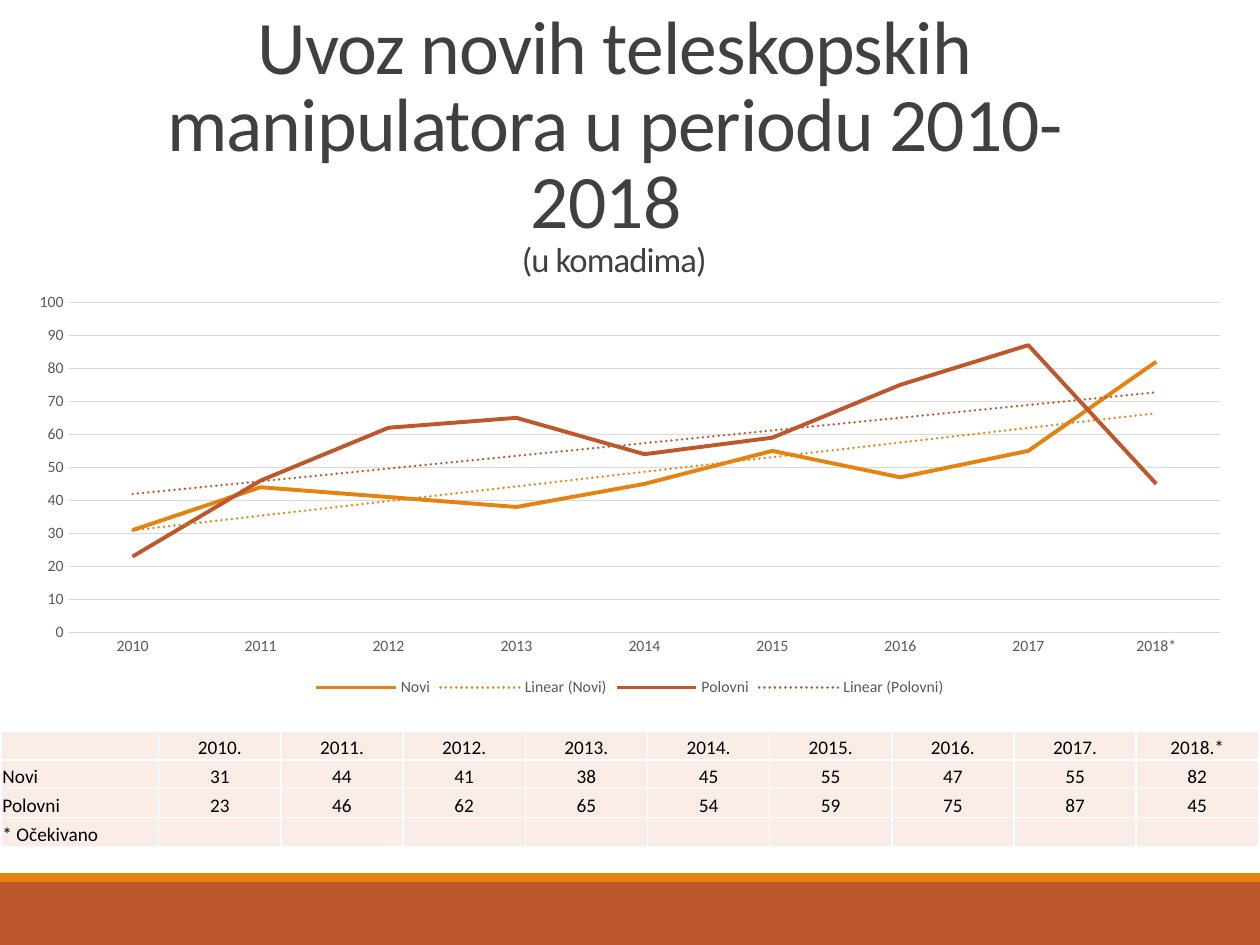
from lxml import etree
from pptx import Presentation
from pptx.chart.data import CategoryChartData
from pptx.dml.color import RGBColor
from pptx.enum.chart import XL_CHART_TYPE, XL_LEGEND_POSITION, XL_MARKER_STYLE, XL_TICK_MARK
from pptx.enum.shapes import MSO_SHAPE
from pptx.enum.text import MSO_ANCHOR, MSO_AUTO_SIZE, PP_ALIGN
from pptx.oxml import parse_xml
from pptx.oxml.ns import nsdecls, qn
from pptx.util import Inches, Pt

LINE, BOTTOM = XL_CHART_TYPE.LINE, XL_LEGEND_POSITION.BOTTOM
NO_MARKER, NO_TICK = XL_MARKER_STYLE.NONE, XL_TICK_MARK.NONE
RECTANGLE, CENTER, LEFT = MSO_SHAPE.RECTANGLE, PP_ALIGN.CENTER, PP_ALIGN.LEFT
ANCHOR_BOTTOM, NO_FIT = MSO_ANCHOR.BOTTOM, MSO_AUTO_SIZE.NONE

ORANGE, RUST, GRAY, GRID = "E48312", "BD582C", "595959", "D9D9D9"
YEARS = range(2010, 2019)
IMPORTS = {
    "Novi": ([31, 44, 41, 38, 45, 55, 47, 55, 82], ORANGE),
    "Polovni": ([23, 46, 62, 65, 54, 59, 75, 87, 45], RUST),
}


def color(value):
    return RGBColor.from_string(value)


def set_font(font, size, value):
    for name, setting in {"size": Pt(size), "name": "Calibri"}.items():
        setattr(font, name, setting)
    font.color.rgb = color(value)


deck = Presentation()
deck.slide_width, deck.slide_height = Inches(10), Inches(7.5)
page = deck.slides.add_slide(deck.slide_layouts[5])

for top, height, fill in [(7, 0.5, RUST), (6.93, 0.07, ORANGE)]:
    band = page.shapes.add_shape(RECTANGLE, 0, Inches(top), deck.slide_width, Inches(height))
    band.shadow.inherit = False
    band.fill.solid()
    band.fill.fore_color.rgb = color(fill)
    band.line.fill.background()

title = page.shapes.title
title.left, title.top, title.width, title.height = map(Inches, (0.75, 0.68, 8.25, 1.59))
frame = title.text_frame
for name, setting in {"word_wrap": True, "auto_size": NO_FIT, "vertical_anchor": ANCHOR_BOTTOM}.items():
    setattr(frame, name, setting)
para = frame.paragraphs[0]
para.alignment, para.line_spacing = CENTER, 0.85
for text, size in [("Uvoz novih teleskopskih manipulatora u periodu 2010-2018 ", 43.2), ("(u komadima)", 19.8)]:
    if para.runs:
        para.add_line_break()
    span = para.add_run()
    span.text = text
    set_font(span.font, size, "404040")
    span.font._element.set("spc", "-50")

data = CategoryChartData()
data.categories = [f"{year}*" if year == YEARS[-1] else str(year) for year in YEARS]
for name, (values, _) in IMPORTS.items():
    data.add_series(name, values)
chart = page.shapes.add_chart(LINE, *map(Inches, (0.12, 2.26, 9.76, 3.31)), data).chart
set_font(chart.font, 10, "000000")
chart.has_title = False
chart.has_legend = True
chart.legend.position, chart.legend.include_in_layout = BOTTOM, False
set_font(chart.legend.font, 9, GRAY)

category_axis, value_axis = chart.category_axis, chart.value_axis
for axis in (category_axis, value_axis):
    axis.major_tick_mark = axis.minor_tick_mark = NO_TICK
    set_font(axis.tick_labels.font, 9, GRAY)
value_axis.minimum_scale, value_axis.maximum_scale, value_axis.major_unit = 0, 100, 10
value_axis.format.line.fill.background()
for line in (category_axis.format.line, value_axis.major_gridlines.format.line):
    line.color.rgb, line.width = color(GRID), Pt(0.75)

for series in chart.plots[0].series:
    shade = IMPORTS[series.name][1]
    series.smooth = False
    series.marker.style = NO_MARKER
    series.format.line.color.rgb, series.format.line.width = color(shade), Pt(2.25)
    trend = parse_xml(
        f'<c:trendline {nsdecls("c", "a")}><c:spPr><a:ln w="{Pt(1.5)}" cap="rnd">'
        f'<a:solidFill><a:srgbClr val="{shade}"/></a:solidFill><a:prstDash val="sysDot"/></a:ln></c:spPr>'
        '<c:trendlineType val="linear"/><c:dispRSqr val="0"/><c:dispEq val="0"/></c:trendline>'
    )
    series._element.find(qn("c:cat")).addprevious(trend)

rows = [[""] + [f"{year}.*" if year == YEARS[-1] else f"{year}." for year in YEARS]]
rows += [[name, *map(str, values)] for name, (values, _) in IMPORTS.items()]
rows.append(["* Očekivano"] + [""] * len(YEARS))
table = page.shapes.add_table(len(rows), len(rows[0]), *map(Inches, (0.01, 5.8, 9.99, 0.92))).table
for index, column in enumerate(table.columns):
    column.width = Inches(0.97 if index else 1.25)
for row, texts in zip(table.rows, rows):
    row.height = Inches(0.23)
    for index, (cell, text) in enumerate(zip(row.cells, texts)):
        for side in ("left", "right", "top", "bottom"):
            setattr(cell, f"margin_{side}", Inches(0 if side == "bottom" else 0.01))
        cell.vertical_anchor = ANCHOR_BOTTOM
        for edge in "LRTB":
            cell._tc.get_or_add_tcPr().append(parse_xml(
                f'<a:ln{edge} {nsdecls("a")} w="{Pt(1)}"><a:solidFill>'
                f'<a:srgbClr val="FFFFFF"/></a:solidFill></a:ln{edge}>'
            ))
        cell.fill.solid()
        cell.fill.fore_color.rgb = color("FAEDE7")
        para = cell.text_frame.paragraphs[0]
        para.alignment = CENTER if index else LEFT
        if text:
            span = para.add_run()
            span.text = text
            set_font(span.font, 11, "000000")
            span.font.bold = False
        else:
            etree.SubElement(para._p, qn("a:endParaRPr"), sz="1100")

deck.save("out.pptx")
